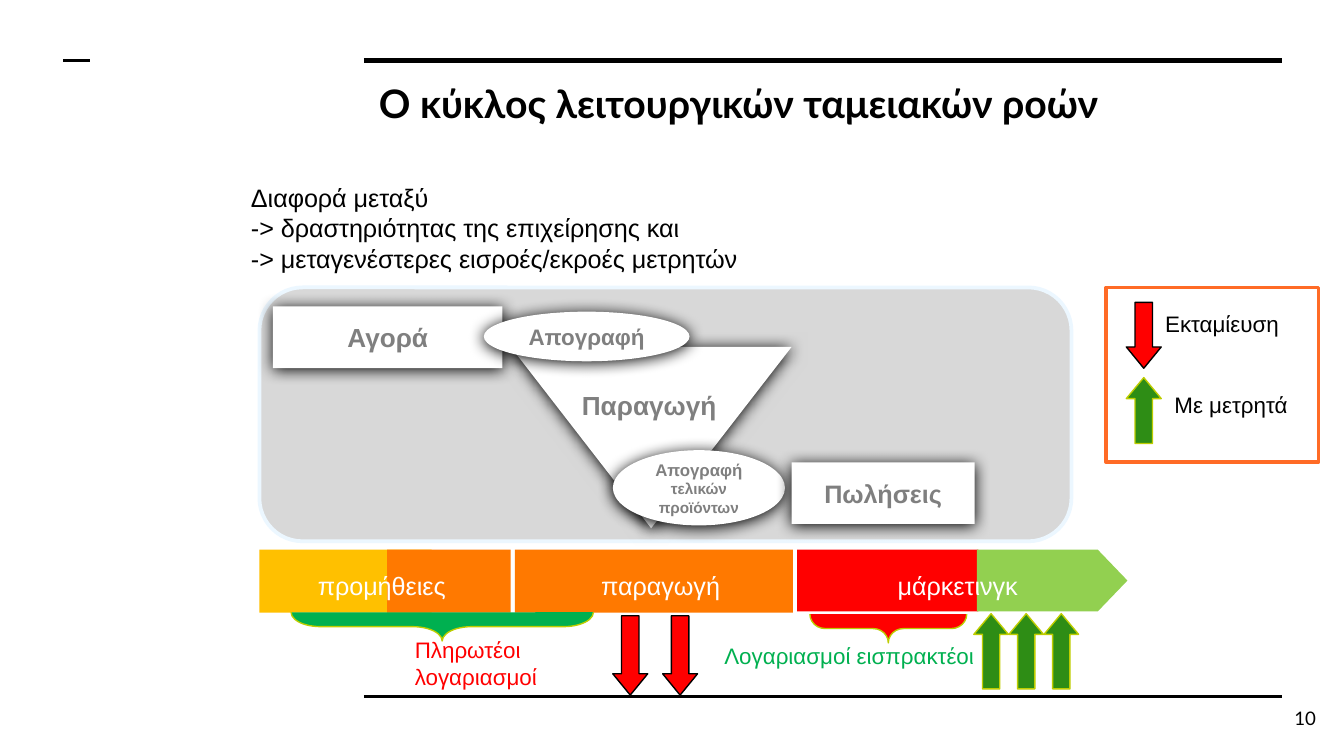
from dataclasses import dataclass

from lxml import etree
from pptx import Presentation, util as u
from pptx.dml.color import RGBColor
from pptx.enum import shapes as sh, text as tx
from pptx.oxml import ns

Pt = u.Pt
KIND = sh.MSO_SHAPE
ALIGN = tx.PP_ALIGN
MID, TOP = tx.MSO_ANCHOR.MIDDLE, tx.MSO_ANCHOR.TOP


@dataclass(frozen=True)
class Theme:
    sans: str = "Arial"
    lato: str = "Lato"
    black: str = "000000"
    white: str = "FFFFFF"
    gray: str = "7F7F7F"
    panel: str = "D8D8D8"
    edge: str = "ECF7FF"
    amber: str = "FFC000"
    orange: str = "FF7900"
    frame: str = "FF6B26"
    red: str = "FF0000"
    lime: str = "92D050"
    green: str = "00B050"
    leaf: str = "2E8D15"
    olive: str = "BECD00"
    title: float = 21
    step: float = 14
    body: float = 13.5
    label: float = 12
    small: float = 9
    tiny: float = 8.2
    page: float = 10


T = Theme()


def color(code):
    return RGBColor.from_string(code)


def place(box, x, y, w, h):
    """Lengths in points, measured from the corner of the region."""
    return Pt(box[0] + x), Pt(box[1] + y), Pt(w), Pt(h)


def write(item, paras, font=T.sans, code=T.black, bold=False,
          align=ALIGN.LEFT, anchor=TOP, pad=(7.2, 3.6)):
    """Each paragraph is a list of (text, size) runs."""
    frame = item.text_frame
    frame.word_wrap = True
    frame.auto_size = tx.MSO_AUTO_SIZE.NONE
    frame.vertical_anchor = anchor
    frame.margin_left = frame.margin_right = Pt(pad[0])
    frame.margin_top = frame.margin_bottom = Pt(pad[1])
    for i, runs in enumerate(paras):
        para = frame.add_paragraph() if i else frame.paragraphs[0]
        para.alignment = align
        for words, size in runs:
            run = para.add_run()
            run.text = words
            run.font.name, run.font.size = font, Pt(size)
            run.font.bold, run.font.color.rgb = bold, color(code)
    return frame


def label(slide, box, spot, words, size, **look):
    item = slide.shapes.add_textbox(*place(box, *spot))
    return write(item, [[(words, size)]], **look)


def shape(slide, kind, box, spot, fill=None, line=None, width=0.75, adj=()):
    item = slide.shapes.add_shape(kind, *place(box, *spot))
    item.shadow.inherit = False
    if fill:
        item.fill.solid()
        item.fill.fore_color.rgb = color(fill)
    else:
        item.fill.background()
    if line:
        item.line.color.rgb = color(line)
        item.line.width = Pt(width)
    else:
        item.line.fill.background()
    for i, value in enumerate(adj):
        item.adjustments[i] = value
    return item


def glow(item):
    """Soft dark shadow around a white card."""
    effects = item.element.spPr.find(ns.qn("a:effectLst"))
    cast = etree.SubElement(effects, ns.qn("a:outerShdw"), blurRad=str(Pt(8.5)),
                            dist=str(Pt(1)), dir="5400000", algn="ctr", rotWithShape="0")
    etree.SubElement(cast, ns.qn("a:srgbClr"), val=T.black)


def card(slide, kind, box, spot, *runs):
    item = shape(slide, kind, box, spot, T.white)
    glow(item)
    write(item, [runs], code=T.gray, bold=True, align=ALIGN.CENTER, anchor=MID)


def arrow(slide, box, spot, up):
    if up:
        shape(slide, KIND.UP_ARROW, box, spot, T.leaf, T.olive, adj=(0.5, 0.6))
    else:
        shape(slide, KIND.DOWN_ARROW, box, spot, T.red, T.black, adj=(0.5, 0.61))


def brace(slide, box, mid, span, fill, bend):
    """Brace opening upward, centred at mid."""
    deep = 15.4
    spot = (mid[0] - deep / 2, mid[1] - span / 2, deep, span)
    item = shape(slide, KIND.LEFT_BRACE, box, spot, fill, T.olive, adj=(bend, 0.5))
    item.rotation = 270


def rule(slide, x, y, end, width):
    line = slide.shapes.add_connector(sh.MSO_CONNECTOR.STRAIGHT, Pt(x), Pt(y), Pt(end), Pt(y))
    line.line.color.rgb = color(T.black)
    line.line.width = Pt(width)
    etree.SubElement(line.element.spPr, ns.qn("a:effectLst"))


def head(slide, box):
    title = slide.shapes.title
    title.left, title.top, title.width, title.height = place(box, 0, 0, *box[2:])
    write(title, [[("Ο κύκλος λειτουργικών ταμειακών ροών", T.title)]],
          font=T.lato, bold=True, pad=(7.2, 7.2))


def intro(slide, box):
    lines = ("Διαφορά μεταξύ", "-> δραστηριότητας της επιχείρησης και",
             "-> μεταγενέστερες εισροές/εκροές μετρητών")
    item = slide.shapes.add_textbox(*place(box, 0, 0, *box[2:]))
    write(item, [[(line, T.body)] for line in lines])


def cycle(slide, box):
    shape(slide, KIND.ROUNDED_RECTANGLE, box, (0, 0, *box[2:]),
          T.panel, T.edge, 2, adj=(0.17,))
    card(slide, KIND.RECTANGLE, box, (7.2, 10.2, 123, 33), ("Αγορά", T.step))
    card(slide, KIND.FLOWCHART_MERGE, box, (134.6, 31.8, 150.5, 97.2))
    card(slide, KIND.OVAL, box, (120.2, 13, 110.2, 26.6), ("Απογραφή", T.label))
    card(slide, KIND.OVAL, box, (189.3, 87.2, 92.2, 40.3),
         ("Απογραφή ", T.small), ("τελικών προϊόντων", T.tiny))
    card(slide, KIND.RECTANGLE, box, (285.1, 93.7, 98, 33), ("Πωλήσεις", T.body))
    label(slide, box, (165.6, 51.2, 97.2, 24.5), "Παραγωγή", T.step,
          code=T.gray, bold=True)


def stages(slide, box):
    high = box[3]
    for x, wide, fill in ((0, 92.2, T.amber), (68.4, 66.2, T.orange), (136.8, 149, T.orange)):
        shape(slide, KIND.RECTANGLE, box, (x, 0, wide, high), fill)
    shape(slide, KIND.RECTANGLE, box, (288, 0, 97.2, high - 0.7), T.red)
    shape(slide, KIND.PENTAGON, box, (384.4, 0, 80.6, high - 0.7), T.lime, adj=(0.48,))
    for x, wide, words in ((7.2, 116.6, "προμήθειες"), (148.3, 133.2, "παραγωγή"),
                           (301, 146.2, "μάρκετινγκ")):
        label(slide, box, (x, 7, wide, 23.8), words, T.body,
              code=T.white, align=ALIGN.CENTER, anchor=MID)


def flows(slide, box):
    # Accounts payable and receivable
    brace(slide, box, (97.9, 7.7), 162, T.green, 1.03)
    brace(slide, box, (336.9, 8.7), 84, T.red, 0.53)
    frame = label(slide, box, (48.2, 15.4, 135.4, 23.8), "Πληρωτέοι λογαριασμοί",
                  T.label, code=T.red, anchor=MID)
    frame.margin_left = Pt(35)
    label(slide, box, (210.9, 12.6, 210.2, 21.6), "Λογαριασμοί εισπρακτέοι",
          T.label, code=T.green, align=ALIGN.CENTER, anchor=MID)
    # Cash out, then cash in
    for x in (189.3, 216):
        arrow(slide, box, (x, 1.9, 18.7, 42.5), up=False)
    for i in range(3):
        arrow(slide, box, (382.7 + 18.8 * i, 0.8, 18.5, 40.3), up=True)


def legend(slide, box):
    arrow(slide, box, (10.8, 8, 18.7, 35.3), up=False)
    arrow(slide, box, (10.8, 48.3, 18.7, 35.3), up=True)
    label(slide, box, (24.5, 8.7, 89.3, 21.6), "Εκταμίευση", T.label)
    label(slide, box, (29.5, 51.9, 77.8, 21.6), "Με μετρητά", T.label)
    shape(slide, KIND.RECTANGLE, box, (0, 0, *box[2:]), line=T.frame, width=2)


def foot(slide, box):
    label(slide, box, (0, 0, *box[2:]), "10", T.page, font=T.lato,
          align=ALIGN.RIGHT, anchor=MID, pad=(7.2, 7.2))


def main():
    deck = Presentation()
    deck.slide_width, deck.slide_height = Pt(720), Pt(405)
    slide = deck.slides.add_slide(deck.slide_layouts[5])
    # Rules of the page
    rule(slide, 195, 32.4, 687, 3)
    rule(slide, 195, 373, 687, 1.5)
    rule(slide, 33.8, 32.4, 48.2, 1.5)
    # Regions: left, top, width, height
    head(slide, (195.8, 35.3, 491.8, 38.2))
    intro(slide, (127.4, 94.3, 489.6, 240.5))
    cycle(slide, (139, 154, 435, 136))
    stages(slide, (139, 294.5, 465, 33.8))
    flows(slide, (139, 328, 465, 45))
    legend(slide, (592.6, 154, 113.8, 93.6))
    foot(slide, (668.9, 369.4, 43.2, 31))
    deck.save("out.pptx")


if __name__ == "__main__":
    main()
